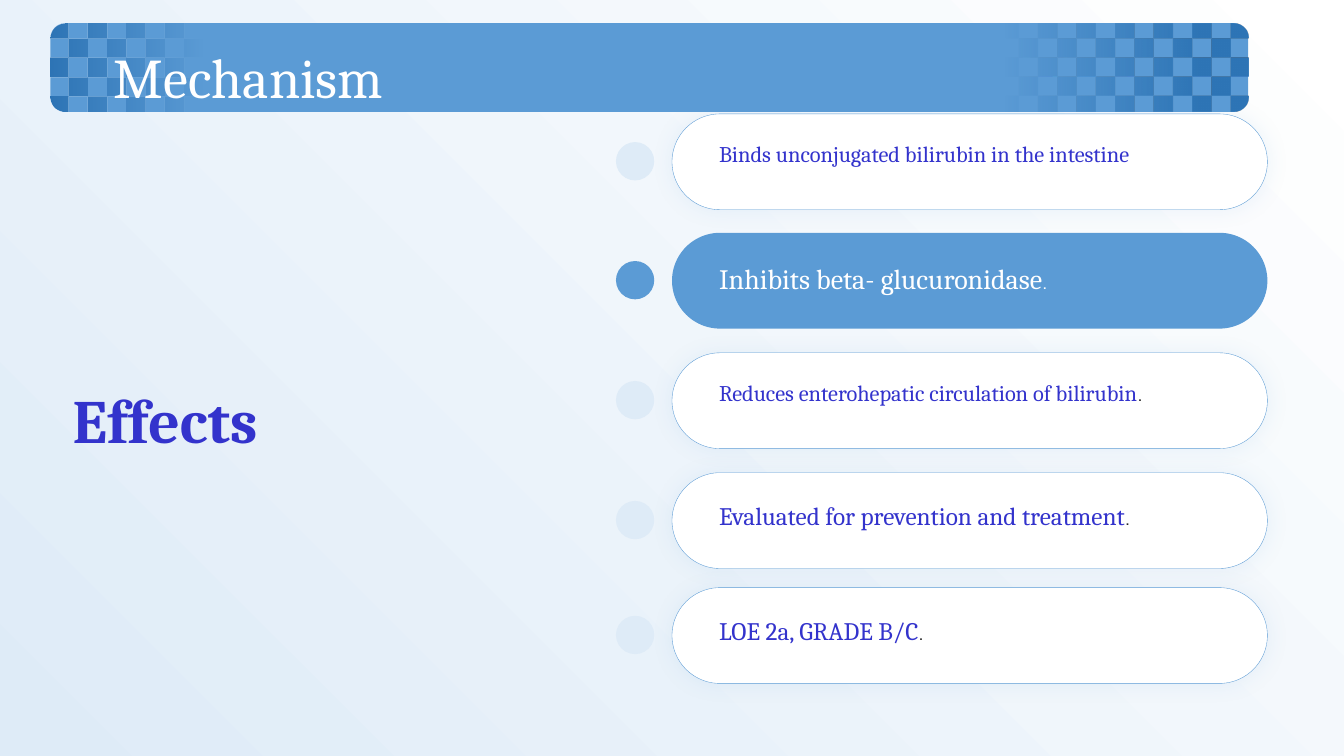
from math import cos, sin, radians
from lxml import etree
from pptx import Presentation, util as u
from pptx.dml.color import RGBColor
from pptx.enum import shapes as s, text as t
from pptx.oxml.ns import qn

deck = Presentation()
deck.slide_width, deck.slide_height = u.Inches(13.33), u.Inches(7.5)
slide = deck.slides.add_slide(deck.slide_layouts[5])
draw = slide.shapes
BLUE, PALE, DEEP, INK, WHITE = "5B9BD5", "DEEBF7", "2E75B6", "3333CC", "FFFFFF"
kind = s.MSO_SHAPE
hue = RGBColor.from_string


def share(x, y, w, h):
    wide, high = deck.slide_width / 100, deck.slide_height / 100
    return [u.Emu(round(n)) for n in (x * wide, y * high, w * wide, h * high)]


def blend(shape, stops, angle):
    shape.shadow.inherit = False
    shape.line.fill.background()
    shape.fill.gradient()
    shape.fill.gradient_angle = angle
    for stop, (pos, color, alpha) in zip(shape.fill.gradient_stops, stops):
        stop.position = pos
        stop.color.rgb = hue(color)
    for mark, (pos, color, alpha) in zip(shape._element.spPr.iter(qn("a:srgbClr")), stops):
        if alpha < 100:
            etree.SubElement(mark, qn("a:alpha"), val=str(alpha * 1000))


back = draw.add_shape(kind.RECTANGLE, *share(0, 0, 100, 100))
blend(back, [(0, WHITE, 100), (1, PALE, 100)], 225)

rows = [
    (15.07, 16, "Binds unconjugated bilirubin in the intestine", ""),
    (30.8, 20, "Inhibits beta- glucuronidase", "."),
    (46.67, 16, "Reduces enterohepatic circulation of bilirubin", "."),
    (62.53, 18, "Evaluated for prevention and treatment", "."),
    (77.73, 18, "LOE 2a, GRADE B/C", "."),
]
for i, (top, size, words, stop) in enumerate(rows):
    main = i == 1
    pill = draw.add_shape(kind.ROUNDED_RECTANGLE, *share(50, top, 44.3, 12.67))
    pill.adjustments[0] = 0.5
    dot = draw.add_shape(kind.OVAL, *share(45.83, top + 3.73, 2.85, 5.07))
    for shape, color in ((pill, BLUE if main else WHITE), (dot, BLUE if main else PALE)):
        shape.shadow.inherit = False
        shape.fill.solid()
        shape.fill.fore_color.rgb = hue(color)
        shape.line.fill.background()
    if not main:
        pill.line.color.rgb = hue(BLUE)
        pill.line.width = u.Pt(0.25)
        glow = etree.SubElement(
            pill._element.spPr.find(qn("a:effectLst")), qn("a:outerShdw"),
            blurRad=str(u.Pt(15)), dist="0", dir="0", algn="ctr", rotWithShape="0")
        tint = etree.SubElement(glow, qn("a:srgbClr"), val=BLUE)
        etree.SubElement(tint, qn("a:alpha"), val="10000")

    frame = draw.add_textbox(*share(53.5, top + 2.4, 38.25, size * 0.29)).text_frame
    frame.margin_left = frame.margin_right = frame.margin_top = frame.margin_bottom = 0
    frame.word_wrap = True
    frame.auto_size = t.MSO_AUTO_SIZE.SHAPE_TO_FIT_TEXT
    para = frame.paragraphs[0]
    para.line_spacing = 1.3
    parts = [(words, size, "Cambria", INK), (stop, 14, "Manrope", "262626")]
    for label, high, face, color in parts:
        if label:
            run = para.add_run()
            run.text = label
            run.font.size, run.font.name = u.Pt(high), face
            run.font.color.rgb = hue(WHITE if main else color)

bar = draw.add_shape(kind.ROUNDED_RECTANGLE, *share(3.75, 3.07, 89.12, 11.73))
bar.shadow.inherit = False
bar.fill.solid()
bar.fill.fore_color.rgb = hue(BLUE)
bar.line.fill.background()

STEP, ROUND = 190, 147
LEFT, TOP, RIGHT, BASE = 500, 230, 12380, 1110
ends = [
    (490, 8, 0, [(0, DEEP, 100), (1, DEEP, 0)]),
    (9730, 14, 1, [(0.09, DEEP, 0), (0.83, DEEP, 100)]),
]
for start, count, odd, stops in ends:
    loops = []
    for row in range(5):
        for col in range(count):
            if (row + col) % 2 != odd:
                continue
            x0, x1 = [min(max(start + STEP * n, LEFT), RIGHT) for n in (col, col + 1)]
            y0, y1 = [min(max(STEP * n, TOP), BASE) for n in (row + 1, row + 2)]
            loop = []
            for k, (x, y) in enumerate([(x0, y0), (x1, y0), (x1, y1), (x0, y1)]):
                if x in (LEFT, RIGHT) and y in (TOP, BASE):
                    cx = x + ROUND if x == LEFT else x - ROUND
                    cy = y + ROUND if y == TOP else y - ROUND
                    turns = [radians(180 + 90 * k + a) for a in range(0, 91, 10)]
                    loop += [(cx + ROUND * cos(a), cy + ROUND * sin(a)) for a in turns]
                else:
                    loop.append((x, y))
            loops.append(loop)
    pen = draw.build_freeform(*loops[0][0], scale=914.4)
    pen.add_line_segments(loops[0][1:])
    for loop in loops[1:]:
        pen.move_to(*loop[0])
        pen.add_line_segments(loop[1:])
    blend(pen.convert_to_shape(), stops, 0)

title = draw.title
title.left, title.top, title.width, title.height = share(8.48, 4.8, 63.17, 7.87)
draw._spTree.append(title._element)
side = draw.add_textbox(*share(5.4, 32.53, 36.68, 40.93))
heads = [(title, "Mechanism", 40, WHITE, 1.3, False), (side, "Effects", 44, INK, 1.5, True)]
for box, words, size, color, gap, bold in heads:
    frame = box.text_frame
    frame.text = words
    frame.margin_left = frame.margin_right = frame.margin_top = frame.margin_bottom = 0
    frame.word_wrap = True
    frame.auto_size = t.MSO_AUTO_SIZE.NONE
    frame.vertical_anchor = t.MSO_ANCHOR.MIDDLE
    para = frame.paragraphs[0]
    para.alignment = t.PP_ALIGN.LEFT
    para.line_spacing = gap
    para.font.name, para.font.size, para.font.bold = "Cambria", u.Pt(size), bold
    para.font.color.rgb = hue(color)

deck.save("out.pptx")
